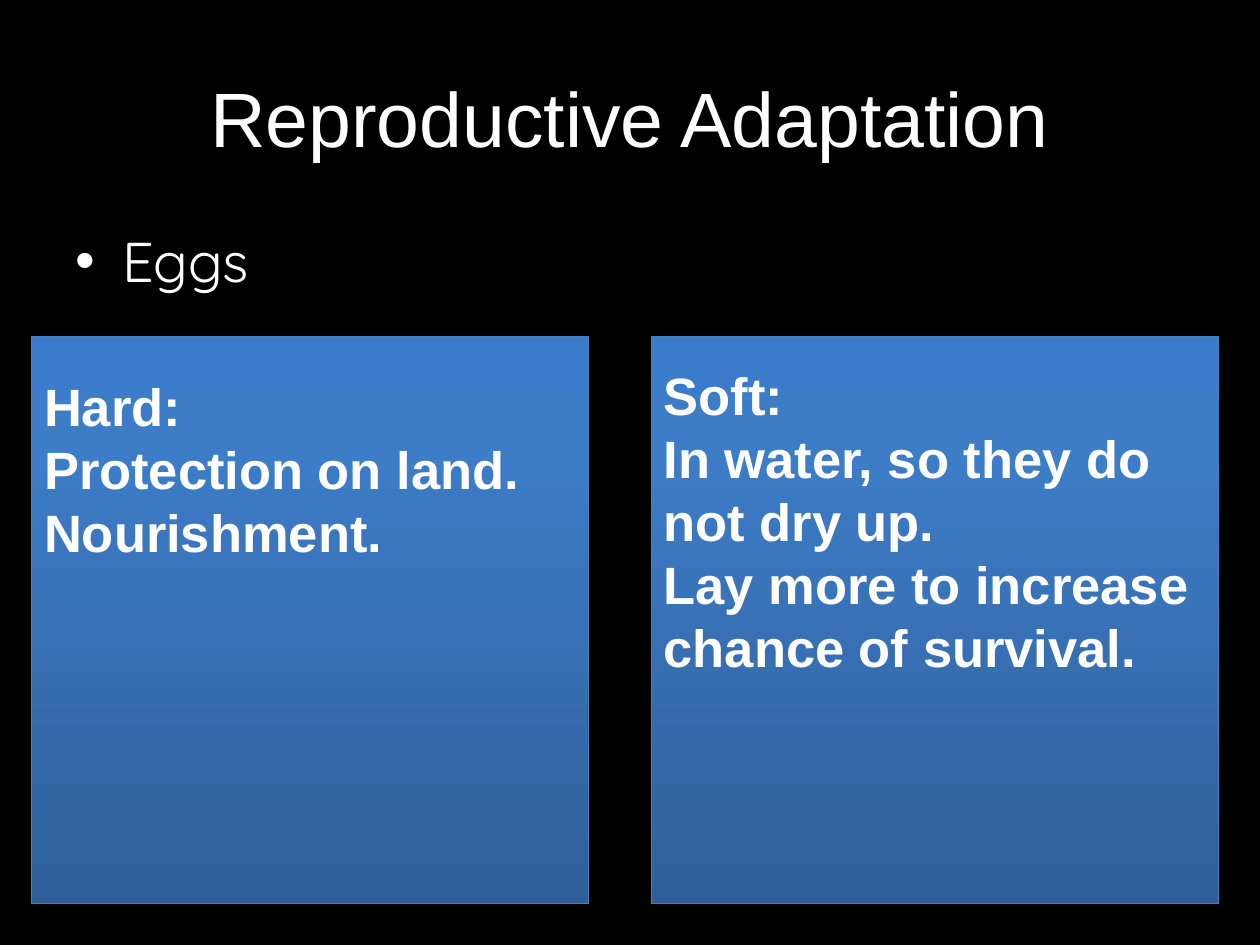
from copy import deepcopy
from dataclasses import dataclass

from lxml.etree import SubElement
from pptx import Presentation
from pptx.dml.color import RGBColor
from pptx.enum.shapes import MSO_SHAPE
from pptx.enum.text import MSO_ANCHOR, PP_ALIGN
from pptx.oxml.ns import qn
from pptx.slide import Slide
from pptx.text.text import TextFrame, _Paragraph
from pptx.util import Cm, Pt

BLACK = RGBColor(0x00, 0x00, 0x00)
WHITE = RGBColor(0xFF, 0xFF, 0xFF)
OUTLINE_BLUE = RGBColor(0x4B, 0x7E, 0xBC)
PANEL_GRADIENT = (
    (0.0, RGBColor(0x2F, 0x5F, 0x99)),
    (0.8, RGBColor(0x3D, 0x7C, 0xC7)),
    (1.0, RGBColor(0x3A, 0x7C, 0xCB)),
)
PANEL_TOP, PANEL_HEIGHT = Cm(6.78), Cm(11.43)
PANEL_TEXT_WIDTH = Cm(11.43)


@dataclass(frozen=True)
class EggPanel:
    left: Cm
    width: Cm
    text_top: Cm
    text_height: Cm
    lines: tuple[str, ...]


EGG_PANELS = (
    EggPanel(Cm(13.13), Cm(11.43), Cm(7.2), Cm(6.65), (
        "Soft:",
        "In water, so they do not dry up.",
        "Lay more to increase chance of survival.",
    )),
    EggPanel(Cm(0.64), Cm(11.23), Cm(7.41), Cm(4.11), (
        "Hard:",
        "Protection on land.",
        "Nourishment.",
    )),
)


def add_run(paragraph: _Paragraph, text: str, size: int,
            font_name: str = "Arial", bold: bool = False) -> None:
    run = paragraph.add_run()
    run.text = text
    run.font.name = font_name
    run.font.size = Pt(size)
    run.font.bold = bold
    run.font.color.rgb = WHITE


def add_text_frame(slide: Slide, left: Cm, top: Cm, width: Cm, height: Cm) -> TextFrame:
    frame = slide.shapes.add_textbox(left, top, width, height).text_frame
    frame.word_wrap = True
    return frame


def add_title(slide: Slide, text: str) -> None:
    title = slide.shapes.title
    title.left, title.top, title.width, title.height = Cm(1.27), Cm(0.76), Cm(22.86), Cm(3.18)
    title.text_frame.vertical_anchor = MSO_ANCHOR.MIDDLE
    paragraph = title.text_frame.paragraphs[0]
    paragraph.alignment = PP_ALIGN.CENTER
    add_run(paragraph, text, 44)


def add_bullet(slide: Slide, text: str) -> None:
    frame = add_text_frame(slide, Cm(1.27), Cm(4.45), Cm(22.86), Cm(12.57))
    paragraph = frame.paragraphs[0]
    properties = paragraph._p.get_or_add_pPr()
    properties.set("marL", str(Cm(0.95)))
    properties.set("indent", str(-Cm(0.95)))
    SubElement(properties, qn("a:buFont"), typeface="Arial")
    SubElement(properties, qn("a:buChar"), char="•")
    add_run(paragraph, text, 32, "Quicksand")


def add_panel_background(slide: Slide, panel: EggPanel) -> None:
    background = slide.shapes.add_shape(
        MSO_SHAPE.RECTANGLE, panel.left, PANEL_TOP, panel.width, PANEL_HEIGHT)
    background.shadow.inherit = False
    background.line.color.rgb = OUTLINE_BLUE
    background.line.width = Pt(0.75)

    fill = background.fill
    fill.gradient()
    fill.gradient_angle = 90
    stop_list = background._element.spPr.find(qn("a:gradFill")).find(qn("a:gsLst"))
    stop_list.append(deepcopy(stop_list[-1]))
    for stop, (position, color) in zip(fill.gradient_stops, PANEL_GRADIENT):
        stop.position = position
        stop.color.rgb = color


def add_panel_text(slide: Slide, panel: EggPanel) -> None:
    frame = add_text_frame(
        slide, panel.left, panel.text_top, PANEL_TEXT_WIDTH, panel.text_height)
    for index, line in enumerate(panel.lines):
        paragraph = frame.add_paragraph() if index else frame.paragraphs[0]
        add_run(paragraph, line, 30, bold=True)


def main() -> None:
    presentation = Presentation()
    presentation.slide_width, presentation.slide_height = Cm(25.4), Cm(19.05)
    slide = presentation.slides.add_slide(
        presentation.slide_layouts.get_by_name("Title Only"))
    slide.background.fill.solid()
    slide.background.fill.fore_color.rgb = BLACK

    add_title(slide, "Reproductive Adaptation")
    add_bullet(slide, "Eggs")
    for panel in EGG_PANELS:
        add_panel_background(slide, panel)
    for panel in EGG_PANELS:
        add_panel_text(slide, panel)
    presentation.save("out.pptx")


if __name__ == "__main__":
    main()
